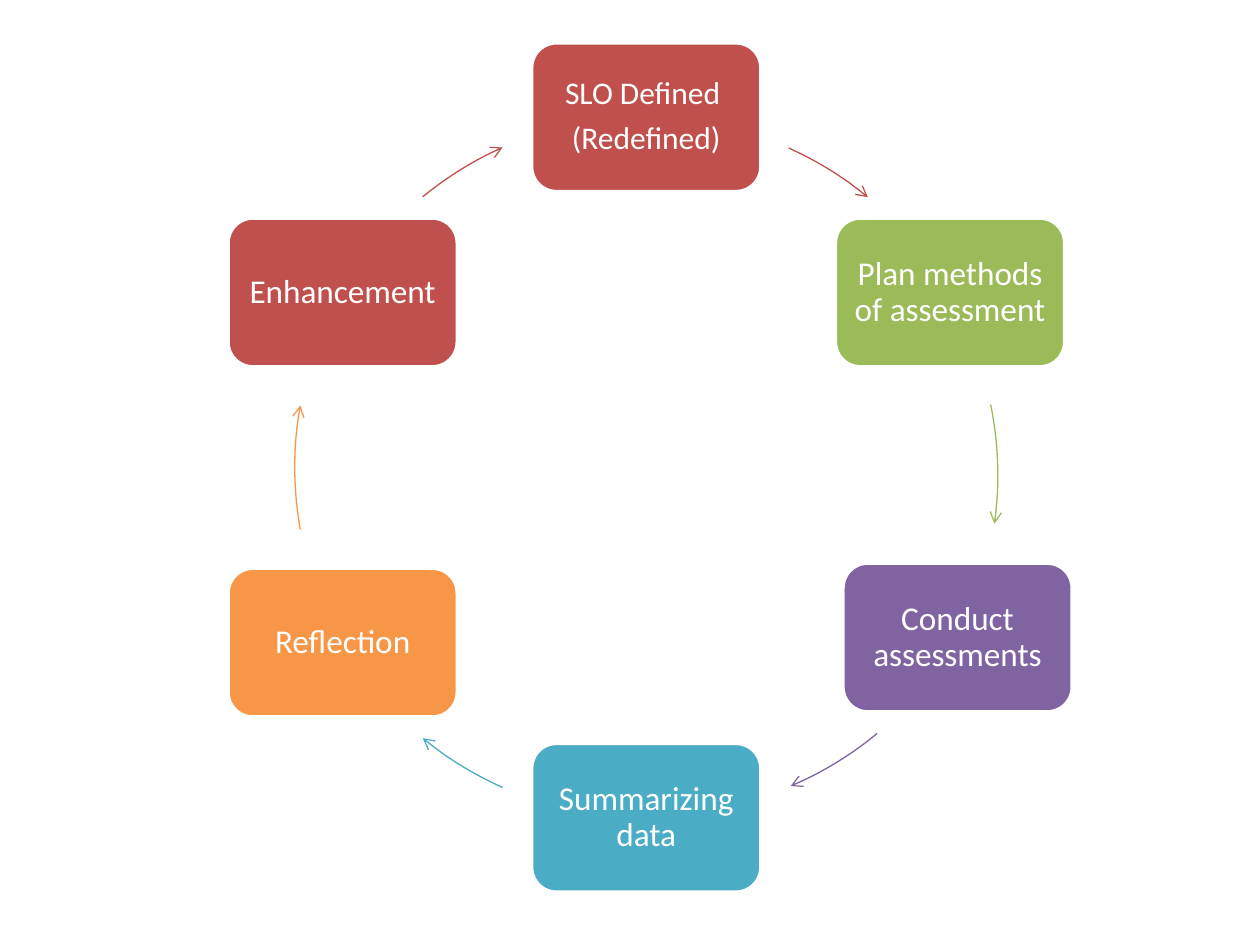
"""Build a slide with a six-step assessment cycle of boxes and curved arrows."""
from lxml import etree
from pptx import Presentation
from pptx import util as u
from pptx.dml.color import RGBColor
from pptx.enum import shapes, text
from pptx.oxml.ns import qn

WHITE = RGBColor(0xFF, 0xFF, 0xFF)
RED = RGBColor(0xC0, 0x50, 0x4D)
GREEN = RGBColor(0x9B, 0xBB, 0x59)
PURPLE = RGBColor(0x80, 0x64, 0xA2)
TEAL = RGBColor(0x4B, 0xAC, 0xC6)
ORANGE = RGBColor(0xF7, 0x96, 0x46)

BOX_W, BOX_H = 131, 85
DIAMETER = 400.3
LEFT, MIDDLE, RIGHT = 130.3, 303.8, 477.4
RING = (168.5, 67)

STEPS = [
    (["SLO Defined ", "(Redefined)"], 18, RED, (MIDDLE, 24.5), RING, (294.2, 309.5)),
    (["Plan methods of assessment"], 19, GREEN, (RIGHT, 124.6), (169.9, 71.3), (348.4, 8)),
    (["Conduct assessments"], 19, PURPLE, (481.7, 321.8), (173.5, 64.8), (50.4, 67)),
    (["Summarizing data"], 19, TEAL, (MIDDLE, 424.8), RING, (114, 129.4)),
    (["Reflection"], 19, ORANGE, (LEFT, 324.7), RING, (169.8, 190.2)),
    (["Enhancement"], 19, RED, (LEFT, 124.6), RING, (230.6, 246)),
]


class CycleSlide:
    def __init__(self, slide, font="Calibri"):
        self.slide = slide
        self.font = font

    def shape(self, kind, left, top, width, height, line, line_width):
        sp = self.slide.shapes.add_shape(
            kind, u.Pt(left), u.Pt(top), u.Pt(width), u.Pt(height))
        sp.shadow.inherit = False
        sp.line.color.rgb = line
        sp.line.width = u.Pt(line_width)
        return sp

    def box(self, lines, size, color, left, top):
        sp = self.shape(shapes.MSO_SHAPE.ROUNDED_RECTANGLE,
                        left, top, BOX_W, BOX_H, WHITE, 2)
        sp.fill.solid()
        sp.fill.fore_color.rgb = color
        tf = sp.text_frame
        tf.word_wrap = True
        tf.vertical_anchor = text.MSO_ANCHOR.MIDDLE
        tf.margin_left = tf.margin_right = u.Pt(3)
        tf.margin_top = tf.margin_bottom = u.Pt(3)
        for i, line in enumerate(lines):
            p = tf.add_paragraph() if i else tf.paragraphs[0]
            p.alignment = text.PP_ALIGN.CENTER
            p.line_spacing = 0.9
            p.space_after = u.Pt(round(size * 0.35, 1))
            r = p.add_run()
            r.text = line
            r.font.name = self.font
            r.font.size = u.Pt(size)
            r.font.color.rgb = WHITE

    def arrow(self, color, left, top, start, end):
        sp = self.shape(shapes.MSO_SHAPE.ARC, left, top, DIAMETER, DIAMETER, color, 0.75)
        sp.fill.background()
        for i, degrees in enumerate((start, end)):
            sp.adjustments[i] = degrees * 60000 / 100000
        ln = sp.line.color and sp.element.spPr.find(qn("a:ln"))
        etree.SubElement(ln, qn("a:tailEnd"), type="arrow")


def main():
    prs = Presentation()
    prs.slide_width, prs.slide_height = u.Pt(720), u.Pt(540)
    cycle = CycleSlide(prs.slides.add_slide(prs.slide_layouts[6]))
    for lines, size, color, corner, ring, angles in STEPS:
        cycle.box(lines, size, color, *corner)
        cycle.arrow(color, *ring, *angles)
    prs.save("out.pptx")


if __name__ == "__main__":
    main()
